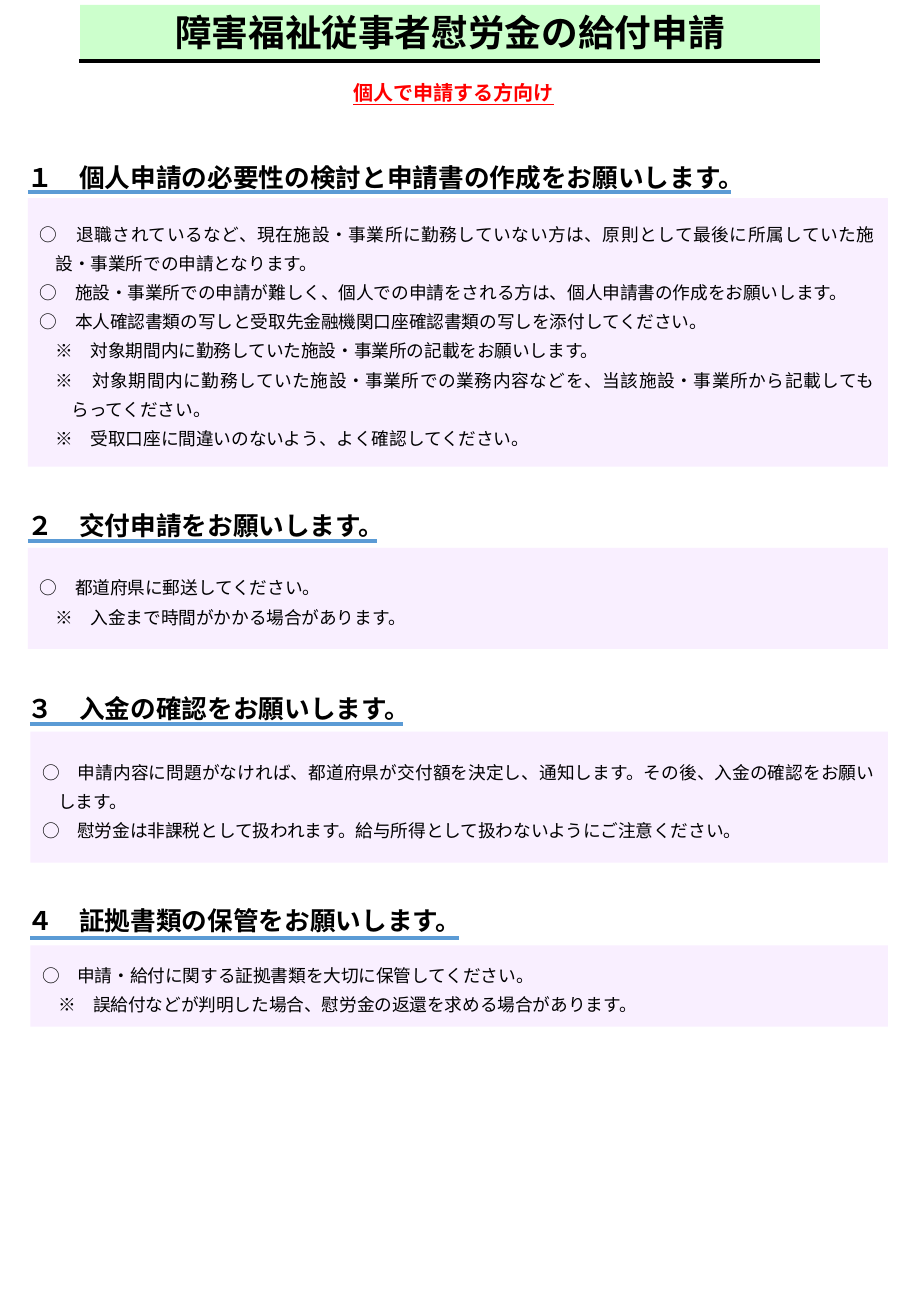
from dataclasses import dataclass

from lxml import etree
from pptx import Presentation
from pptx.dml.color import RGBColor
from pptx.enum.shapes import MSO_CONNECTOR, MSO_SHAPE
from pptx.enum.text import MSO_ANCHOR, MSO_AUTO_SIZE, PP_ALIGN
from pptx.oxml.ns import qn
from pptx.util import Inches, Pt

RECT, STRAIGHT = MSO_SHAPE.RECTANGLE, MSO_CONNECTOR.STRAIGHT
MIDDLE, NO_FIT = MSO_ANCHOR.MIDDLE, MSO_AUTO_SIZE.NONE
LEFT, CENTER, JUSTIFY = PP_ALIGN.LEFT, PP_ALIGN.CENTER, PP_ALIGN.JUSTIFY


@dataclass(frozen=True)
class Theme:
    font: str = "Noto Sans CJK JP"
    black: RGBColor = RGBColor(0, 0, 0)
    red: RGBColor = RGBColor(0xFF, 0, 0)
    blue: RGBColor = RGBColor(0x5B, 0x9B, 0xD5)
    green: RGBColor = RGBColor(0xCC, 0xFF, 0xCC)
    lilac: RGBColor = RGBColor(0xF9, 0xEF, 0xFF)
    title: float = 21.7
    heading: float = 15.2
    subtitle: float = 11.9
    body: float = 10.5
    leading: float = 17.3
    rule: float = 2.25


T = Theme()
HANG = 0.13
INDENT_LEVELS = {"○": 1, "※": 2}

# heading, heading top and width, rule y and right end, panel left, top and height, items
SECTIONS = [
    ("１　個人申請の必要性の検討と申請書の作成をお願いします。",
     1.17, 6.19, 1.58, 6.02, 0.23, 1.63, 2.21, [
         "○　退職されているなど、現在施設・事業所に勤務していない方は、原則として最後に所属していた施設・事業所での申請となります。",
         "○　施設・事業所での申請が難しく、個人での申請をされる方は、個人申請書の作成をお願いします。",
         "○　本人確認書類の写しと受取先金融機関口座確認書類の写しを添付してください。",
         "※　対象期間内に勤務していた施設・事業所の記載をお願いします。",
         "※　対象期間内に勤務していた施設・事業所での業務内容などを、当該施設・事業所から記載してもらってください。",
         "※　受取口座に間違いのないよう、よく確認してください。"]),
    ("２　交付申請をお願いします。",
     4.04, 3.8, 4.45, 3.1, 0.23, 4.51, 0.83, [
         "○　都道府県に郵送してください。",
         "※　入金まで時間がかかる場合があります。"]),
    ("３　入金の確認をお願いします。",
     5.54, 4.01, 5.96, 3.32, 0.25, 6.02, 1.08, [
         "○　申請内容に問題がなければ、都道府県が交付額を決定し、通知します。その後、入金の確認をお願いします。",
         "○　慰労金は非課税として扱われます。給与所得として扱わないようにご注意ください。"]),
    ("４　証拠書類の保管をお願いします。",
     7.29, 4.58, 7.72, 3.78, 0.25, 7.78, 0.67, [
         "○　申請・給付に関する証拠書類を大切に保管してください。",
         "※　誤給付などが判明した場合、慰労金の返還を求める場合があります。"]),
]
PANEL_RIGHT = 7.31


def write(sp, lines, align, size, color=T.black, bold=False, underline=False):
    """Fill a shape with one paragraph per line and return the paragraphs."""
    tf = sp.text_frame
    frame_format = {"word_wrap": True, "auto_size": NO_FIT, "vertical_anchor": MIDDLE}
    for name, value in frame_format.items():
        setattr(tf, name, value)
    font_format = {"name": T.font, "size": Pt(size), "bold": bold, "underline": underline}
    for i, line in enumerate(lines):
        p = tf.add_paragraph() if i else tf.paragraphs[0]
        p.alignment = align
        r = p.add_run()
        r.text = line
        for name, value in font_format.items():
            setattr(r.font, name, value)
        r.font.color.rgb = color
        latin = r.font._element.find(qn("a:latin"))
        east_asian = etree.Element(qn("a:ea"), typeface=T.font)
        latin.addnext(east_asian)
    return tf.paragraphs


def add_rule(left, right, y, color):
    line = slide.shapes.add_connector(STRAIGHT, Inches(left), Inches(y), Inches(right), Inches(y))
    line.line.color.rgb = color
    line.line.width = Pt(T.rule)
    etree.SubElement(line._element.spPr, qn("a:effectLst"))


prs = Presentation()
prs.slide_width, prs.slide_height = Inches(7.5), Inches(10.83)
slide = prs.slides.add_slide(prs.slide_layouts[5])

title = slide.shapes.title
title.left, title.top, title.width, title.height = map(Inches, (0.66, 0.04, 6.09, 0.45))
title.fill.solid()
title.fill.fore_color.rgb = T.green
write(title, ["障害福祉従事者慰労金の給付申請"], CENTER, T.title, bold=True)
add_rule(0.65, 6.75, 0.5, T.black)

subtitle = slide.shapes.add_textbox(*map(Inches, (0.69, 0.61, 6.09, 0.31)))
write(subtitle, ["個人で申請する方向け"], CENTER, T.subtitle, T.red, bold=True, underline=True)

for heading, top, width, rule_y, rule_right, left, panel_top, panel_height, items in SECTIONS:
    sp = slide.shapes.add_textbox(*map(Inches, (0.13, top, width, 0.57)))
    write(sp, [heading], LEFT, T.heading, bold=True)
    add_rule(left, rule_right, rule_y, T.blue)

    panel = slide.shapes.add_shape(
        RECT, *map(Inches, (left, panel_top, PANEL_RIGHT - left, panel_height)))
    panel.shadow.inherit = False
    panel.fill.solid()
    panel.fill.fore_color.rgb = T.lilac
    panel.line.fill.background()
    for p, item in zip(write(panel, items, JUSTIFY, T.body), items):
        p.line_spacing = Pt(T.leading)
        pPr = p._p.get_or_add_pPr()
        pPr.set("marL", str(Inches(HANG * INDENT_LEVELS[item[0]])))
        pPr.set("indent", str(Inches(-HANG)))

prs.save("out.pptx")
